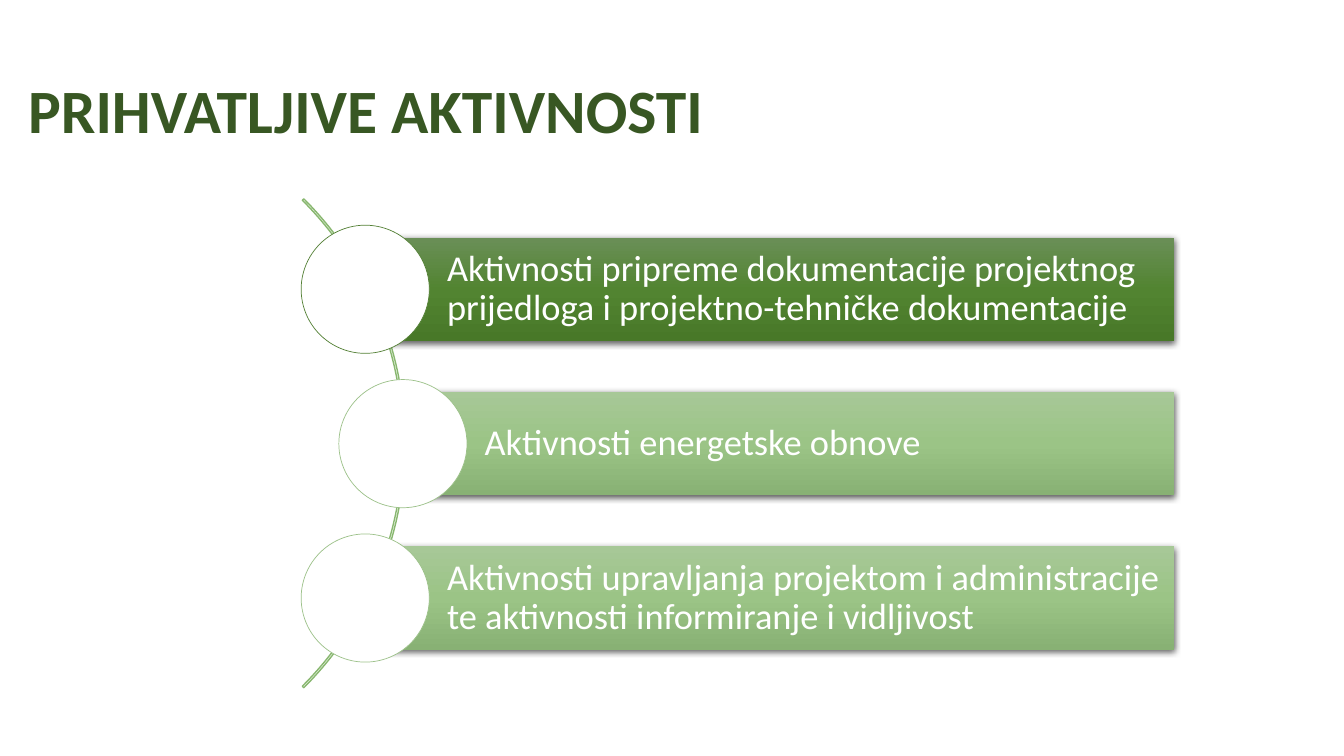
from lxml.etree import SubElement
from pptx import Presentation
from pptx.dml.color import RGBColor
from pptx.enum.shapes import MSO_SHAPE as Preset
from pptx.enum.text import MSO_ANCHOR as Anchor, PP_ALIGN as Align
from pptx.oxml.ns import qn
from pptx.util import Cm, Pt

WHITE = RGBColor(0xFF, 0xFF, 0xFF)
BLACK = RGBColor(0x00, 0x00, 0x00)
TITLE_GREEN = RGBColor(0x38, 0x57, 0x23)
ARC_GREEN = RGBColor(0x88, 0xB7, 0x6F)
DARK_OUTLINE = RGBColor(0x53, 0x80, 0x35)
LIGHT_OUTLINE = RGBColor(0x9C, 0xC1, 0x89)
DARK_GRADIENT = (RGBColor(0x6A, 0x8F, 0x57), RGBColor(0x52, 0x84, 0x31), RGBColor(0x48, 0x78, 0x28))
LIGHT_GRADIENT = (RGBColor(0xA7, 0xC8, 0x97), RGBColor(0x9B, 0xC4, 0x86), RGBColor(0x88, 0xB1, 0x74))

ACTIVITIES = (
    ("Aktivnosti pripreme dokumentacije projektnog prijedloga i projektno-tehničke dokumentacije",
     0, DARK_GRADIENT, DARK_OUTLINE),
    ("Aktivnosti energetske obnove", 0.95, LIGHT_GRADIENT, LIGHT_OUTLINE),
    ("Aktivnosti upravljanja projektom i administracije te aktivnosti informiranje i vidljivost",
     0, LIGHT_GRADIENT, LIGHT_OUTLINE),
)
ROW_TOP, ROW_STEP = 7.29, 3.89
CIRCLE_LEFT, CIRCLE_SIZE = 7.59, 3.23
BAR_RIGHT, BAR_HEIGHT = 29.59, 2.6


class SlideBuilder:
    font_name = "Calibri"

    def __init__(self, presentation):
        self.slide = presentation.slides.add_slide(presentation.slide_layouts[6])

    def add_text(self, shape, text, size, color, align, insets, bold=False):
        frame = shape.text_frame
        frame.word_wrap = True
        frame.vertical_anchor = Anchor.MIDDLE
        frame.margin_left, frame.margin_top, frame.margin_right, frame.margin_bottom = map(Cm, insets)
        paragraph = frame.paragraphs[0]
        paragraph.alignment = align
        paragraph.line_spacing = 0.9
        run = paragraph.add_run()
        run.text = text
        run.font.name = self.font_name
        run.font.size = Pt(size)
        run.font.bold = bold
        run.font.color.rgb = color

    def title(self, text, left, top, width, height):
        box = self.slide.shapes.add_textbox(Cm(left), Cm(top), Cm(width), Cm(height))
        self.add_text(box, text, 44, TITLE_GREEN, Align.CENTER, (0.25, 0.13, 0.25, 0.13), bold=True)

    def preset(self, kind, left, top, width, height):
        shape = self.slide.shapes.add_shape(kind, Cm(left), Cm(top), Cm(width), Cm(height))
        shape.shadow.inherit = False
        return shape

    def outline(self, shape, color, width):
        shape.line.color.rgb = color
        shape.line.width = Pt(width)

    def arc(self, left, top, size):
        shape = self.preset(Preset.BLOCK_ARC, left, top, size, size)
        for index, value in enumerate((189, 27, 0.003)):
            shape.adjustments[index] = value
        shape.fill.background()
        self.outline(shape, ARC_GREEN, 1)

    def circle(self, left, top, size, color):
        shape = self.preset(Preset.OVAL, left, top, size, size)
        shape.fill.solid()
        shape.fill.fore_color.rgb = WHITE
        self.outline(shape, color, 0.5)

    def bar(self, text, left, top, width, height, colors):
        shape = self.preset(Preset.RECTANGLE, left, top, width, height)
        shape.line.fill.background()
        self.gradient(shape, colors)
        self.drop_shadow(shape)
        self.add_text(shape, text, 26, WHITE, Align.LEFT, (2.06, 0.18, 0.18, 0.18))

    def gradient(self, shape, colors):
        shape.fill.gradient()
        shape.fill.gradient_angle = 270
        stops = shape.element.spPr.find(".//" + qn("a:gsLst"))
        for stop in list(stops):
            stops.remove(stop)
        for index, color in enumerate(colors):
            stop = SubElement(stops, qn("a:gs"), pos=str(index * 50000))
            SubElement(stop, qn("a:srgbClr"), val=str(color))

    def drop_shadow(self, shape):
        effects = shape.element.spPr.find(qn("a:effectLst"))
        shadow = SubElement(effects, qn("a:outerShdw"), blurRad=str(Pt(4.5)), dist=str(Pt(1.5)),
                            dir="5400000", algn="ctr", rotWithShape="0")
        color = SubElement(shadow, qn("a:srgbClr"), val=str(BLACK))
        SubElement(color, qn("a:alpha"), val="63000")


def main():
    presentation = Presentation()
    presentation.slide_width = Cm(33.87)
    presentation.slide_height = Cm(19.05)
    builder = SlideBuilder(presentation)
    builder.title("PRIHVATLJIVE AKTIVNOSTI", -5.38, 1.02, 29.21, 3.68)
    builder.arc(-7.21, 2.46, 17.42)
    for row, (text, shift, colors, outline) in enumerate(ACTIVITIES):
        middle = ROW_TOP + row * ROW_STEP
        circle_left = CIRCLE_LEFT + shift
        bar_left = circle_left + CIRCLE_SIZE / 2
        builder.bar(text, bar_left, middle - BAR_HEIGHT / 2, BAR_RIGHT - bar_left, BAR_HEIGHT, colors)
        builder.circle(circle_left, middle - CIRCLE_SIZE / 2, CIRCLE_SIZE, outline)
    presentation.save("out.pptx")


if __name__ == "__main__":
    main()
